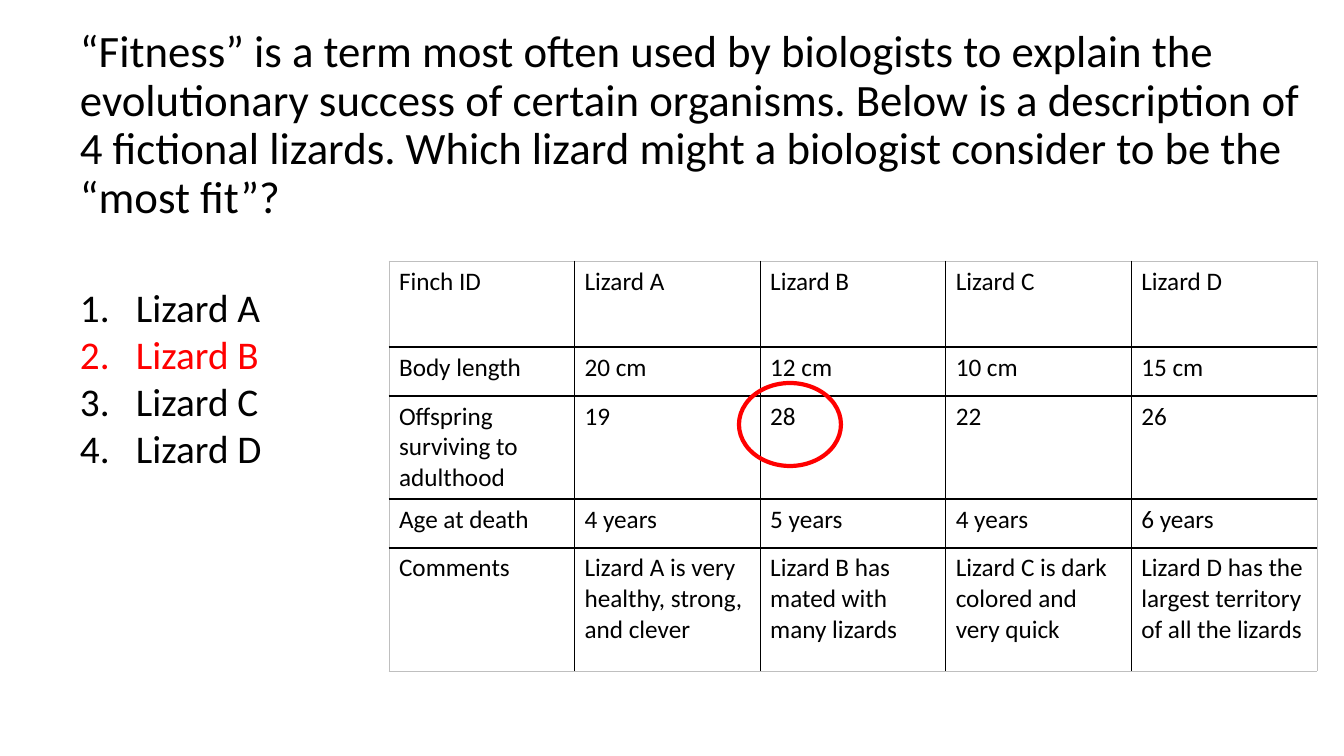
from lxml.etree import SubElement
from pptx import Presentation
from pptx.dml.color import RGBColor
from pptx.enum.shapes import MSO_SHAPE
from pptx.enum.text import MSO_ANCHOR
from pptx.oxml.ns import qn
from pptx.util import Emu, Pt

SLIDE_W, SLIDE_H = 1344, 756
SCALE = 12192000 / SLIDE_W
FONT = "Calibri"
BLACK = RGBColor(0, 0, 0)
RED = RGBColor(255, 0, 0)
GRAY = RGBColor(191, 191, 191)

QUESTION = (
    "“Fitness” is a term most often used by biologists to explain the "
    "evolutionary success of certain organisms. Below is a description of "
    "4 fictional lizards. Which lizard might a biologist consider to be the "
    "“most fit”?"
)
LIZARDS = ["Lizard A", "Lizard B", "Lizard C", "Lizard D"]
ANSWER = "Lizard B"
ROWS = [
    ["Finch ID", *LIZARDS],
    ["Body length", "20 cm", "12 cm", "10 cm", "15 cm"],
    ["Offspring surviving to adulthood", "19", "28", "22", "26"],
    ["Age at death", "4 years", "5 years", "4 years", "6 years"],
    ["Comments",
     "Lizard A is very healthy, strong, and clever",
     "Lizard B has mated with many lizards",
     "Lizard C is dark colored and very quick",
     "Lizard D has the largest territory of all the lizards"],
]
ROW_HEIGHTS = [86, 49, 103, 49, 123]


def px(n):
    """Turn a length in px into EMU."""
    return Emu(round(n * SCALE))


def write(p, text, size=18, color=BLACK, spacing=None):
    """Add one formatted run to a paragraph."""
    p.line_spacing = spacing
    r = p.add_run()
    r.text = text
    r.font.size = Pt(size)
    r.font.name = FONT
    r.font.color.rgb = color


def add_text_frame(s, box, anchor=MSO_ANCHOR.TOP):
    """Add a wrapping text box and return its text frame."""
    tf = s.shapes.add_textbox(*map(px, box)).text_frame
    tf.word_wrap = True
    tf.vertical_anchor = anchor
    return tf


def number(p, indent):
    """Give a paragraph an automatic number with a hanging indent."""
    pPr = p._p.get_or_add_pPr()
    pPr.set("marL", str(px(indent)))
    pPr.set("indent", str(-px(indent)))
    SubElement(pPr, qn("a:buFont"), typeface="+mj-lt")
    SubElement(pPr, qn("a:buAutoNum"), type="arabicPeriod")


def set_border(cell, side, color, width):
    """Draw one side of a cell."""
    ln = SubElement(cell._tc.get_or_add_tcPr(), qn(f"a:ln{side}"), w=str(Pt(width)))
    SubElement(SubElement(ln, qn("a:solidFill")), qn("a:srgbClr"), val=str(color))


def add_question(s, box):
    """Place the question above the answers."""
    tf = add_text_frame(s, box, MSO_ANCHOR.MIDDLE)
    write(tf.paragraphs[0], QUESTION, size=32, spacing=0.9)


def add_choices(s, box):
    """Place the numbered answers with the right one in red."""
    tf = add_text_frame(s, box)
    for i, lizard in enumerate(LIZARDS):
        p = tf.add_paragraph() if i else tf.paragraphs[0]
        write(p, lizard, size=28, color=RED if lizard == ANSWER else BLACK)
        number(p, 56)


def add_lizard_table(s, box):
    """Place the lizard data and circle the most offspring."""
    left, top, width, height = box
    n_rows, n_cols = len(ROWS), len(ROWS[0])
    table = s.shapes.add_table(n_rows, n_cols, *map(px, box)).table
    table.first_row = table.horz_banding = False
    for col in table.columns:
        col.width = px(width / n_cols)
    for i, row in enumerate(ROWS):
        table.rows[i].height = px(ROW_HEIGHTS[i])
        for j, text in enumerate(row):
            cell = table.cell(i, j)
            write(cell.text_frame.paragraphs[0], text)
            outer = {"L": j == 0, "R": j == n_cols - 1,
                     "T": i == 0, "B": i == n_rows - 1}
            for side, is_outer in outer.items():
                set_border(cell, side, *((GRAY, 0.5) if is_outer else (BLACK, 1)))
            cell.fill.background()
    add_circle(s, (left + 350, top + 122, 102, 83))


def add_circle(s, box):
    """Place a red outline around a value."""
    sp = s.shapes.add_shape(MSO_SHAPE.OVAL, *map(px, box))
    sp.shadow.inherit = False
    sp.fill.background()
    sp.line.color.rgb = RED
    sp.line.width = Pt(3)


def main():
    """Build and save the slide."""
    prs = Presentation()
    prs.slide_width, prs.slide_height = px(SLIDE_W), px(SLIDE_H)
    s = prs.slides.add_slide(prs.slide_layouts[6])
    add_question(s, (70, 65, 1249, 122))
    add_choices(s, (70, 278, 231, 201))
    add_lizard_table(s, (389, 261, 928, sum(ROW_HEIGHTS)))
    prs.save("out.pptx")


if __name__ == "__main__":
    main()
